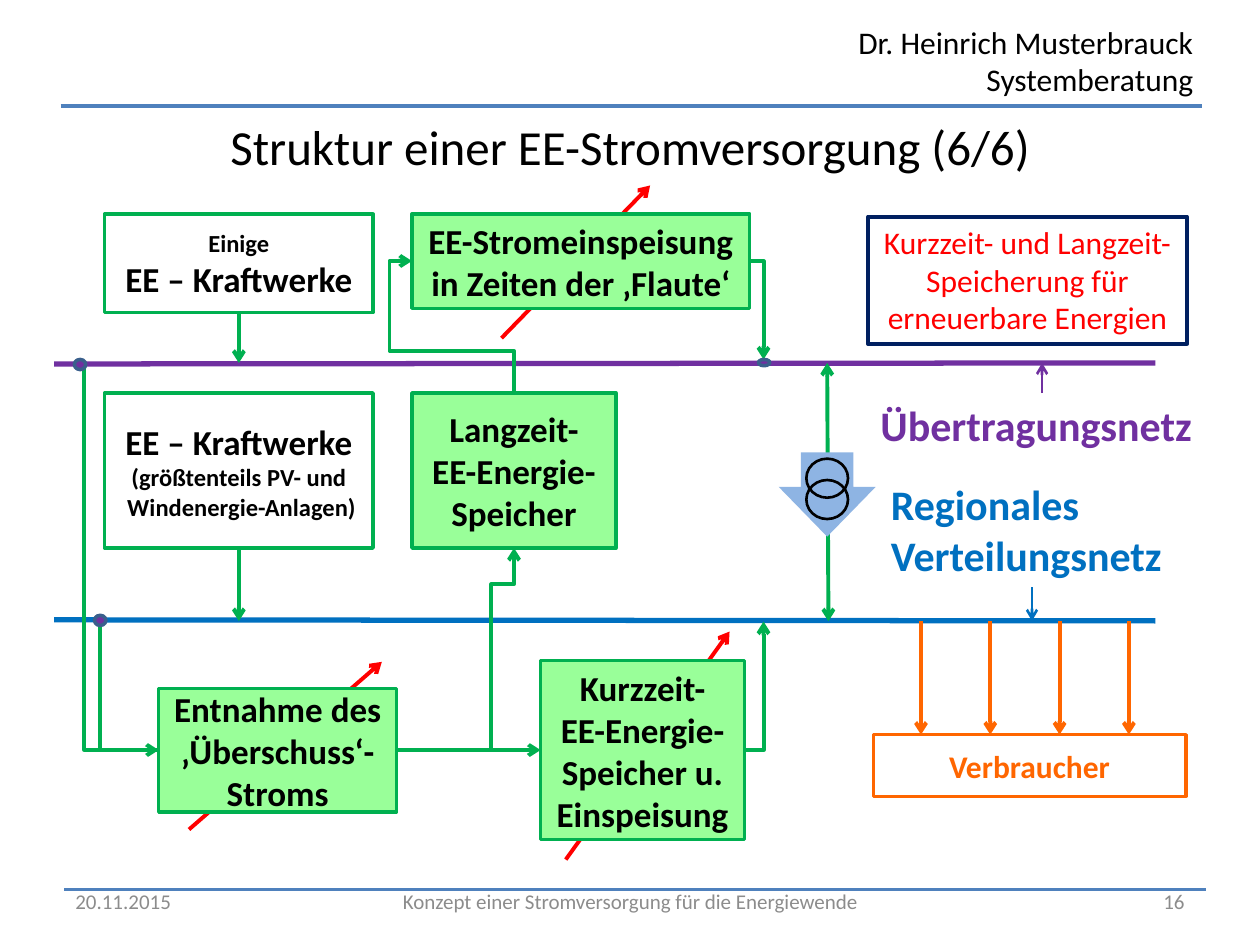
from lxml.etree import SubElement
from pptx import Presentation
from pptx.dml.color import RGBColor
from pptx.enum.shapes import MSO_CONNECTOR as CONN, MSO_SHAPE as SHAPE
from pptx.enum.text import MSO_ANCHOR as ANCHOR, PP_ALIGN as ALIGN
from pptx.oxml.ns import qn
from pptx.util import Pt

C = {
    "rule": "4F81BD", "black": "000000", "grey": "8C8C8C", "red": "FF0000",
    "green": "00B050", "mint": "99FF99", "blue": "0070C0", "purple": "7030A0",
    "orange": "FF6600", "navy": "002060", "sky": "8EB4E3", "dot": "3A5F8C",
}


def rgb(name):
    return RGBColor.from_string(C[name])


def write(sp, paras, color, bold=False, align=ALIGN.CENTER, anchor=ANCHOR.MIDDLE):
    tf = sp.text_frame
    tf.word_wrap = True
    tf.vertical_anchor = anchor
    for i, runs in enumerate(paras):
        p = tf.add_paragraph() if i else tf.paragraphs[0]
        p.alignment = align
        for text, size in runs:
            for j, part in enumerate(text.split("\n")):
                if j:
                    p.add_line_break()
                if part:
                    r = p.add_run()
                    r.text = part
                    r.font.name = "Calibri"
                    r.font.size = Pt(size)
                    r.font.bold = bold
                    r.font.color.rgb = rgb(color)


def label(s, x, y, w, h, text, size, color, **style):
    sp = s.shapes.add_textbox(Pt(x), Pt(y), Pt(w), Pt(h))
    write(sp, [[(text, size)]], color, **style)


def shape(s, kind, x, y, w, h, fill=None, line=None, width=2):
    sp = s.shapes.add_shape(kind, Pt(x), Pt(y), Pt(w), Pt(h))
    sp.shadow.inherit = False
    if fill:
        sp.fill.solid()
        sp.fill.fore_color.rgb = rgb(fill)
    else:
        sp.fill.background()
    if line:
        sp.line.color.rgb = rgb(line)
        sp.line.width = Pt(width)
    else:
        sp.line.fill.background()
    return sp


def line(s, x1, y1, x2, y2, color, width=2.25, ends=(), kind=CONN.STRAIGHT):
    c = s.shapes.add_connector(kind, Pt(x1), Pt(y1), Pt(x2), Pt(y2))
    c.line.color.rgb = rgb(color)
    c.line.width = Pt(width)
    ln = c.line._get_or_add_ln()
    for end in ends:
        SubElement(ln, qn(f"a:{end}")).set("type", "arrow")
    SubElement(c._element.spPr, qn("a:effectLst"))
    return c


def arrow(s, x1, y1, x2, y2, color, width=2.25):
    return line(s, x1, y1, x2, y2, color, width, ["tailEnd"])


def elbow(s, bends, start, end, rot=0, flip="", adj=(), ends=("tailEnd",)):
    (x1, y1), (x2, y2) = start, end
    w, h = abs(x2 - x1), abs(y2 - y1)
    if rot in (90, 270):
        w, h = h, w
    left, top = (x1 + x2 - w) / 2, (y1 + y2 - h) / 2
    xs, ys = [left, left + w], [top, top + h]
    if "h" in flip:
        xs.reverse()
    if "v" in flip:
        ys.reverse()
    c = line(s, xs[0], ys[0], xs[1], ys[1], "green", ends=ends, kind=CONN.ELBOW)
    pr = c._element.spPr
    pr.find(qn("a:xfrm")).set("rot", str(rot * 60000))
    geom = pr.find(qn("a:prstGeom"))
    geom.set("prst", f"bentConnector{bends}")
    for i, value in enumerate(adj, 1):
        gd = SubElement(geom.find(qn("a:avLst")), qn("a:gd"))
        gd.set("name", f"adj{i}")
        gd.set("fmla", f"val {round(value * 100000)}")


def header(s, x, y, w):
    line(s, x, y + 51, x + w, y + 51, "rule")
    label(s, x + 433.4, y, 221, 51, "Dr. Heinrich Musterbrauck\nSystemberatung", 18,
          "black", align=ALIGN.RIGHT, anchor=ANCHOR.TOP)
    label(s, x + 1.4, y + 51.8, 648, 44, "Struktur einer EE-Stromversorgung (6/6)", 28, "black")


def footer(s, x, y, w):
    line(s, x + 0.7, y + 7.9, x + 0.7 + w, y + 7.9, "rule")
    for dx, dw, text, align in (
        (0, 167.8, "20.11.2015", ALIGN.LEFT),
        (159.8, 329, "Konzept einer Stromversorgung für die Energiewende", ALIGN.CENTER),
        (480.2, 167.8, "16", ALIGN.RIGHT),
    ):
        label(s, x + dx, y, dw, 28.8, text, 12, "grey", align=align)


def networks(s, x, y, w, gap):
    line(s, x, y + 0.6, x + w, y, "purple", 3)
    line(s, x, y + gap, x + w, y + gap + 0.6, "blue", 3)
    style = dict(bold=True, align=ALIGN.LEFT, anchor=ANCHOR.TOP)
    label(s, x + 465, y + 17.3, 199, 36, "Übertragungsnetz", 24, "purple", **style)
    label(s, x + 471, y + 62.6, 175.7, 65.5, "Regionales Verteilungsnetz", 24, "blue", **style)
    arrow(s, x + 564.5, y + 17.3, x + 564.5, y, "purple", 1.5)
    arrow(s, x + 558.7, y + 128.2, x + 558.7, y + gap + 0.6, "blue", 1.5)


def plants(s, x, y, w):
    some = [[("Einige", 14)], [("EE – Kraftwerke", 20)]]
    most = [[("EE – Kraftwerke", 20), ("\n(größtenteils PV- und\n Windenergie-Anlagen)", 14)]]
    for dy, h, bus, paras in ((0, 56.2, 85), (102.2, 88.6, 232.5)) and (
            (0, 56.2, 85, some), (102.2, 88.6, 232.5, most)):
        sp = shape(s, SHAPE.RECTANGLE, x, y + dy, w, h, line="green")
        write(sp, paras, "black", bold=True)
        c = arrow(s, x + w / 2, y + dy + h, x + w / 2, y + bus, "green")
        c.begin_connect(sp, 2)


def storage(s, x, y):
    def at(dx, dy):
        return x + dx, y + dy

    for tail, head in (((275.3, 369), (368.9, 238.7)), ((238.6, 71), (323.5, -16.2)),
                       ((60, 351.8), (170.2, 256))):
        arrow(s, *at(*tail), *at(*head), "red")

    boxes = []
    for dx, dy, w, h, text in (
        (187.4, 0, 193, 54, "EE-Stromeinspeisung in Zeiten der ‚Flaute‘"),
        (187.4, 102.4, 116.6, 88.6, "Langzeit-\nEE-Energie-Speicher"),
        (42.7, 271.1, 136, 70.6, "Entnahme des ‚Überschuss‘-Stroms"),
        (260.9, 255.3, 116.6, 102.2, "Kurzzeit-\nEE-Energie-Speicher u. Einspeisung"),
    ):
        sp = shape(s, SHAPE.RECTANGLE, *at(dx, dy), w, h, "mint", "green")
        write(sp, [[(text, 20)]], "black", bold=True)
        boxes.append(sp)
    surplus, short = boxes[2:]

    elbow(s, 2, at(8.9, 235.8), at(42.7, 306.4), 270, "h")
    elbow(s, 2, at(0.2, 88.2), at(42.7, 306.4), 270, "h", ends=())
    elbow(s, 2, at(380.4, 27), at(388.3, 83.2))
    elbow(s, 4, at(245.7, 102.4), at(187.4, 27), 270, "v", (0.32, 1.22))
    elbow(s, 2, at(377.5, 306.4), at(388.3, 233), flip="v")
    elbow(s, 2, at(178.7, 306.4), at(232.8, 232.2), flip="v", ends=())
    elbow(s, 3, at(232.8, 232.2), at(245.7, 191), 90, "hv")
    c = arrow(s, *at(178.7, 306.4), *at(260.9, 306.4), "green")
    c.begin_connect(surplus, 3)
    c.end_connect(short, 1)

    for dx, dy, h in ((385.4, 83.2, 3.6), (-5.5, 83.2, 5.8), (6, 229.4, 5.8)):
        shape(s, SHAPE.OVAL, *at(dx, dy), 6.5, h, "purple", "dot")


def transformer(s, x, y, w, h):
    line(s, x + w / 2 + 0.7, y + 96.5, x + w / 2, y - 51.1, "green",
         ends=("headEnd", "tailEnd"))
    sp = shape(s, SHAPE.DOWN_ARROW, x, y, w, h, "sky")
    sp.adjustments[0] = 0.54
    sp.adjustments[1] = 0.59
    for dy in (3.6, 15.8):
        shape(s, SHAPE.OVAL, x + w / 2 - 11.9, y + dy, 23.8, 22.3, line="black", width=1.5)


def consumers(s, x, y, w, h):
    drop = 64.8
    sp = shape(s, SHAPE.RECTANGLE, x, y + drop, w, h - drop, line="orange")
    write(sp, [[("Verbraucher", 18)]], "orange", bold=True)
    for i in range(4):
        ax = x + 27.3 + i * 39.6
        arrow(s, ax, y, ax, y + drop, "orange")


def topic(s, x, y, w, h):
    sp = shape(s, SHAPE.RECTANGLE, x, y, w, h, line="navy", width=2.25)
    write(sp, [[("Kurzzeit- und Langzeit-Speicherung für\nerneuerbare Energien", 18)]],
          "red", anchor=ANCHOR.TOP)


def main():
    prs = Presentation()
    prs.slide_width, prs.slide_height = Pt(720), Pt(540)
    s = prs.slides.add_slide(prs.slide_layouts[6])
    header(s, 34.6, 9.4, 652.4)
    footer(s, 36, 500.4, 652.4)
    networks(s, 31, 207.4, 629.3, 146.8)
    plants(s, 59.8, 122.4, 153.4)
    storage(s, 48, 122.2)
    transformer(s, 445, 258.5, 55.4, 48.2)
    consumers(s, 499, 355, 178.6, 100.1)
    topic(s, 496.1, 123.8, 182.2, 72.7)
    prs.save("out.pptx")


if __name__ == "__main__":
    main()
